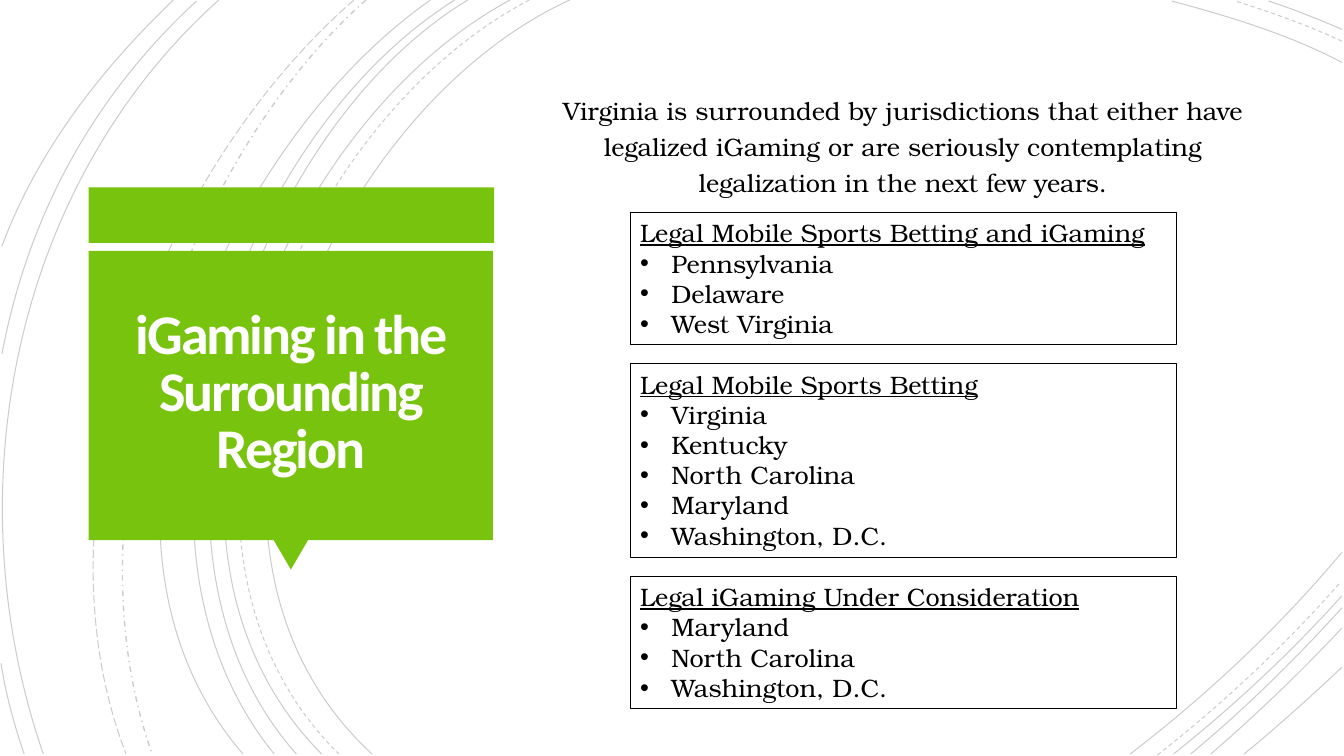
from dataclasses import dataclass

from lxml import etree
from pptx import Presentation
from pptx.dml.color import RGBColor
from pptx.enum.dml import MSO_LINE
from pptx.enum.shapes import MSO_SHAPE
from pptx.enum.text import MSO_ANCHOR, MSO_AUTO_SIZE, PP_ALIGN
from pptx.oxml.ns import qn
from pptx.util import Inches, Pt

SOLID, DASH = MSO_LINE.SOLID, MSO_LINE.DASH
LONG_DASH, DASH_DOT = MSO_LINE.LONG_DASH, MSO_LINE.DASH_DOT
RECTANGLE, TRIANGLE = MSO_SHAPE.RECTANGLE, MSO_SHAPE.ISOSCELES_TRIANGLE
MIDDLE, TOP, CENTER = MSO_ANCHOR.MIDDLE, MSO_ANCHOR.TOP, PP_ALIGN.CENTER
NO_FIT, GROW = MSO_AUTO_SIZE.NONE, MSO_AUTO_SIZE.SHAPE_TO_FIT_TEXT


@dataclass(frozen=True)
class Theme:
    green: RGBColor = RGBColor(0x78, 0xC3, 0x0D)
    black: RGBColor = RGBColor(0, 0, 0)
    white: RGBColor = RGBColor(0xFF, 0xFE, 0xFF)
    title_font: str = "Calibri"
    body_font: str = "TeX Gyre Bonum"
    title_size: int = 40
    body_size: int = 18
    line_width: float = 0.75
    arc_opacity: int = 20


THEME = Theme()

# Each arc: dash, then start, two control points and end
ARCS = [
    (SOLID, (5.65, 0), (3.15, 1.15), (1.43, 5.4), (3.69, 7.48)),
    (SOLID, (13.31, 0.62), (12.78, 0.34), (12.18, 0.16), (11.62, 0.01)),
    (SOLID, (11.21, 7.48), (11.97, 6.9), (12.69, 6.22), (13.31, 5.48)),
    (DASH, (5.25, 0), (2.85, 1.25), (1.23, 5.37), (3.36, 7.48)),
    (DASH, (13.31, 0.41), (12.97, 0.25), (12.6, 0.12), (12.25, 0.01)),
    (DASH, (11.48, 7.49), (12.13, 6.98), (12.75, 6.4), (13.3, 5.77)),
    (SOLID, (5.06, 0), (2.7, 1.27), (1.1, 5.37), (3.19, 7.48)),
    (SOLID, (13.31, 0.29), (13.07, 0.19), (12.83, 0.09), (12.58, 0.01)),
    (SOLID, (11.64, 7.48), (12.23, 7.01), (12.8, 6.48), (13.31, 5.91)),
    (SOLID, (4.64, 0), (2.44, 1.33), (1.1, 5.41), (2.94, 7.48)),
    (SOLID, (11.81, 7.48), (12.34, 7.04), (12.84, 6.55), (13.31, 6.03)),
    (SOLID, (4.51, 0), (2.31, 1.38), (0.97, 5.33), (2.72, 7.48)),
    (SOLID, (12.01, 7.48), (12.46, 7.09), (12.9, 6.67), (13.31, 6.23)),
    (SOLID, (4.27, 0), (2.17, 1.47), (0.53, 5.29), (2.41, 7.48)),
    (SOLID, (12.34, 7.48), (12.67, 7.21), (12.99, 6.92), (13.31, 6.62)),
    (DASH_DOT, (3.63, 0), (1.76, 1.66), (0.65, 5.09), (1.51, 7.48)),
    (LONG_DASH, (3.51, 0), (1.57, 1.69), (0.29, 4.99), (1.25, 7.48)),
    (SOLID, (2.17, 0), (0.11, 1.85), (-0.46, 4.9), (0.43, 7.48)),
    (SOLID, (1.95, 0.01), (0.92, 0.96), (0.28, 2.14), (0.02, 3.51)),
    (SOLID, (0.01, 6.58), (0.06, 6.89), (0.14, 7.19), (0.24, 7.48)),
    (SOLID, (1.72, 0), (1, 0.69), (0.37, 1.5), (0.02, 2.44)),
]

TITLE = "iGaming in the Surrounding Region"
INTRO = ("Virginia is surrounded by jurisdictions that either have legalized "
         "iGaming or are seriously contemplating legalization in the next few years.")
REGION_LISTS = [
    ("Legal Mobile Sports Betting and iGaming",
     ["Pennsylvania", "Delaware", "West Virginia"]),
    ("Legal Mobile Sports Betting",
     ["Virginia", "Kentucky", "North Carolina", "Maryland", "Washington, D.C."]),
    ("Legal iGaming Under Consideration",
     ["Maryland", "North Carolina", "Washington, D.C."]),
]
LIST_TOP, LIST_GAP, LIST_PADDING, TWO_LINES = 2.11, 0.19, 0.09, 0.61


def place(shape, left, top, width, height):
    shape.left, shape.top = Inches(left), Inches(top)
    shape.width, shape.height = Inches(width), Inches(height)


def format_font(paragraph, name, size, color):
    for span in paragraph.runs:
        span.font.name = name
        span.font.size = Pt(size)
        span.font.color.rgb = color


def set_bullet(paragraph, mark=None, indent=0):
    properties = paragraph._p.get_or_add_pPr()
    properties.set("marL", str(Inches(indent)))
    properties.set("indent", str(-Inches(indent)))
    if mark:
        font = etree.SubElement(properties, qn("a:buFont"))
        font.set("typeface", "Arial")
        etree.SubElement(properties, qn("a:buChar")).set("char", mark)
    else:
        etree.SubElement(properties, qn("a:buNone"))


def add_arc(slide, dash, *points):
    start, *others = [(Inches(x), Inches(y)) for x, y in points]
    builder = slide.shapes.build_freeform(*start)
    builder.add_line_segments(others, close=False)
    arc = builder.convert_to_shape()
    # Join the three segments into one cubic curve
    segments = list(arc.element.iter(qn("a:lnTo")))
    curve = etree.SubElement(segments[0].getparent(), qn("a:cubicBezTo"))
    for segment in segments:
        curve.append(segment[0])
        segment.getparent().remove(segment)
    arc.shadow.inherit = False
    arc.fill.background()
    arc.line.width = Pt(1 if dash == DASH_DOT else THEME.line_width)
    arc.line.color.rgb = THEME.black
    arc.line.dash_style = dash
    color = arc.element.spPr.find(".//" + qn("a:srgbClr"))
    etree.SubElement(color, qn("a:alpha")).set("val", str(THEME.arc_opacity * 1000))


def add_green_shape(slide, kind, bounds, rotation=0):
    shape = slide.shapes.add_shape(kind, *(Inches(value) for value in bounds))
    shape.rotation = rotation
    shape.shadow.inherit = False
    shape.fill.solid()
    shape.fill.fore_color.rgb = THEME.green
    shape.line.fill.background()


def fill_placeholder(box, text, bounds, font, size, color, spacing):
    place(box, *bounds)
    # Bring the text in front of the decoration
    box.element.getparent().append(box.element)
    frame = box.text_frame
    frame.text = text
    frame.word_wrap = True
    frame.auto_size = NO_FIT
    frame.vertical_anchor = MIDDLE
    paragraph = frame.paragraphs[0]
    paragraph.alignment = CENTER
    paragraph.line_spacing = spacing
    format_font(paragraph, font, size, color)
    return frame


def add_title(slide):
    frame = fill_placeholder(slide.shapes.title, TITLE, (0.97, 2.57, 3.83, 2.69),
                             THEME.title_font, THEME.title_size, THEME.white, 0.85)
    frame.margin_left = frame.margin_right = Inches(0.25)
    frame.margin_top = frame.margin_bottom = Inches(0.25)
    font = frame.paragraphs[0].runs[0].font
    font.bold = True
    font._element.set("spc", "-150")


def add_intro(slide):
    frame = fill_placeholder(slide.placeholders[1], INTRO, (5.31, 0.88, 7.29, 1.45),
                             THEME.body_font, THEME.body_size, THEME.black, 1.2)
    frame.margin_top, frame.margin_bottom = Inches(0), Inches(0.36)
    paragraph = frame.paragraphs[0]
    paragraph.space_before = Pt(10)
    set_bullet(paragraph)


def add_region_list(slide, top, height, heading, regions):
    box = slide.shapes.add_textbox(Inches(6.25), Inches(top), Inches(5.42), Inches(height))
    box.line.color.rgb = THEME.black
    box.line.width = Pt(THEME.line_width)
    frame = box.text_frame
    frame.text = "\n".join([heading, *regions])
    frame.word_wrap = True
    frame.auto_size = GROW
    frame.vertical_anchor = TOP
    for paragraph in frame.paragraphs:
        format_font(paragraph, THEME.body_font, THEME.body_size, THEME.black)
    frame.paragraphs[0].runs[0].font.underline = True
    for paragraph in frame.paragraphs[1:]:
        set_bullet(paragraph, "•", 0.31)


def main():
    deck = Presentation()
    deck.slide_width, deck.slide_height = Inches(13.33), Inches(7.5)
    slide = deck.slides.add_slide(deck.slide_layouts[1])

    # Background arcs
    for arc in ARCS:
        add_arc(slide, *arc)

    # Green title panel
    add_green_shape(slide, RECTANGLE, (0.88, 1.86, 4.02, 0.55))
    add_green_shape(slide, TRIANGLE, (2.71, 5.35, 0.35, 0.3), rotation=180)
    add_green_shape(slide, RECTANGLE, (0.88, 2.49, 4.01, 2.87))
    add_title(slide)

    # Introduction and stacked region lists
    add_intro(slide)
    top = LIST_TOP
    for heading, regions in REGION_LISTS:
        height = LIST_PADDING + TWO_LINES * (len(regions) + 1) / 2
        add_region_list(slide, top, height, heading, regions)
        top += height + LIST_GAP

    deck.save("out.pptx")


if __name__ == "__main__":
    main()
